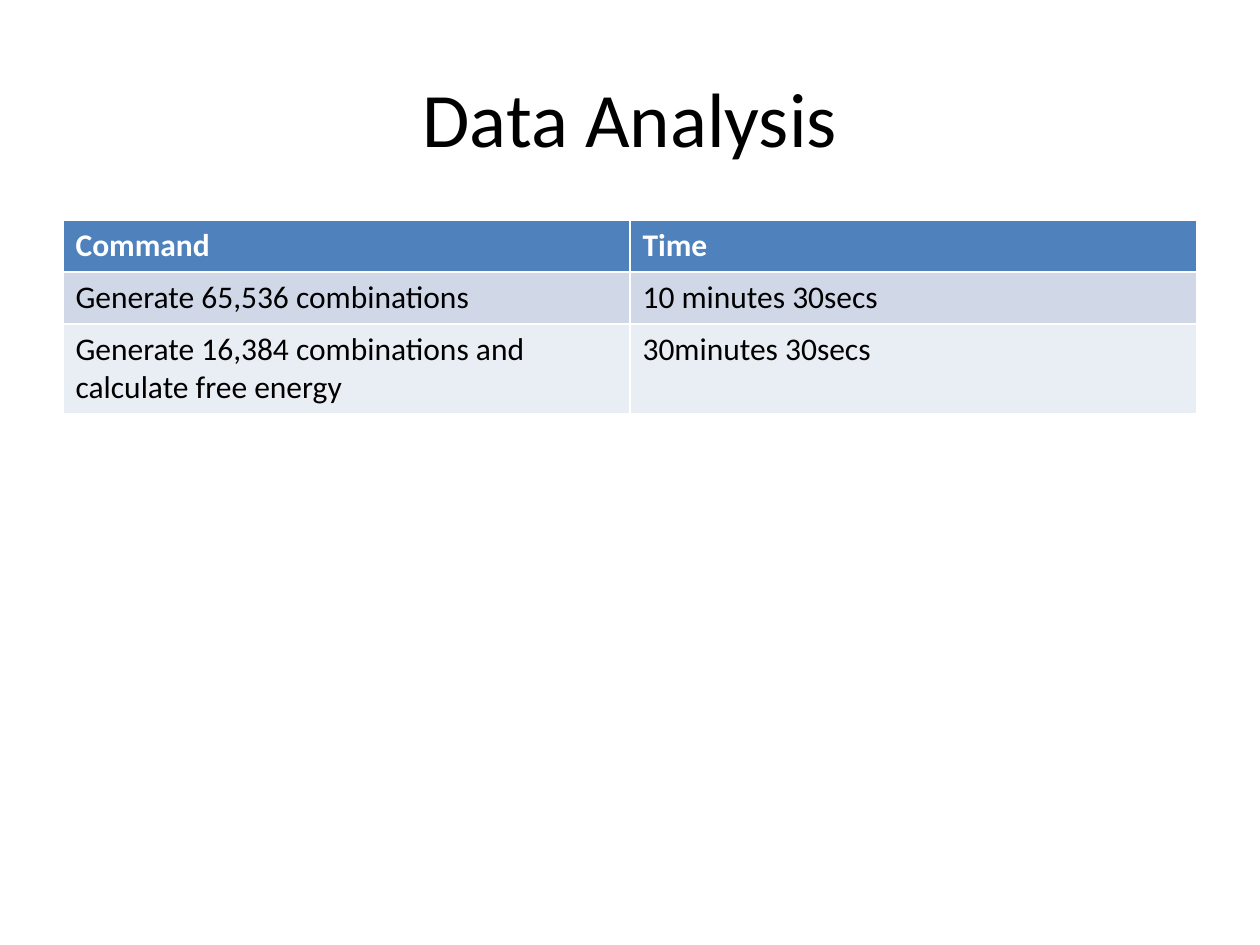
from pptx import Presentation
from pptx.dml.color import RGBColor
from pptx.enum.text import MSO_ANCHOR, PP_ALIGN
from pptx.util import Inches, Pt

CENTER, LEFT = PP_ALIGN.CENTER, PP_ALIGN.LEFT
MIDDLE = MSO_ANCHOR.MIDDLE

TITLE = "Data Analysis"
ROWS = [
    ("Command", "Time"),
    ("Generate 65,536 combinations", "10 minutes 30secs"),
    ("Generate 16,384 combinations and calculate free energy", "30minutes 30secs"),
]
COLORS = {"header": "4F81BD", "odd": "D0D8E8", "even": "E9EDF4",
          "white": "FFFFFF", "black": "000000"}
FONT = "Calibri"
SLIDE_W, SLIDE_H = 10, 7.5
MARGIN = SLIDE_W * 0.05
CONTENT_W = SLIDE_W - 2 * MARGIN
TITLE_TOP, TITLE_H = SLIDE_H * 0.04, 1.25
TABLE_TOP, ROW_H = 1.75, 0.41


def rgb(name):
    return RGBColor.from_string(COLORS[name])


def write(tf, text, size=18, color="black", bold=False, align=LEFT):
    p = tf.paragraphs[0]
    p.alignment = align
    r = p.add_run()
    r.text = text
    r.font.name = FONT
    r.font.size = Pt(size)
    r.font.bold = bold
    r.font.color.rgb = rgb(color)


def add_title(s):
    sp = s.shapes.title
    sp.left, sp.top = Inches(MARGIN), Inches(TITLE_TOP)
    sp.width, sp.height = Inches(CONTENT_W), Inches(TITLE_H)
    sp.text_frame.vertical_anchor = MIDDLE
    write(sp.text_frame, TITLE, size=44, align=CENTER)


def add_timings(s):
    n_rows, n_cols = len(ROWS), len(ROWS[0])
    table = s.shapes.add_table(n_rows, n_cols, Inches(MARGIN), Inches(TABLE_TOP),
                               Inches(CONTENT_W), Inches(ROW_H * n_rows)).table
    for i, row in enumerate(ROWS):
        header = i == 0
        fill = "header" if header else "odd" if i % 2 else "even"
        for j, text in enumerate(row):
            cell = table.cell(i, j)
            cell.fill.solid()
            cell.fill.fore_color.rgb = rgb(fill)
            write(cell.text_frame, text, bold=header,
                  color="white" if header else "black")


def main():
    prs = Presentation()
    prs.slide_width, prs.slide_height = Inches(SLIDE_W), Inches(SLIDE_H)
    s = prs.slides.add_slide(prs.slide_layouts[5])
    add_title(s)
    add_timings(s)
    prs.save("out.pptx")


if __name__ == "__main__":
    main()
